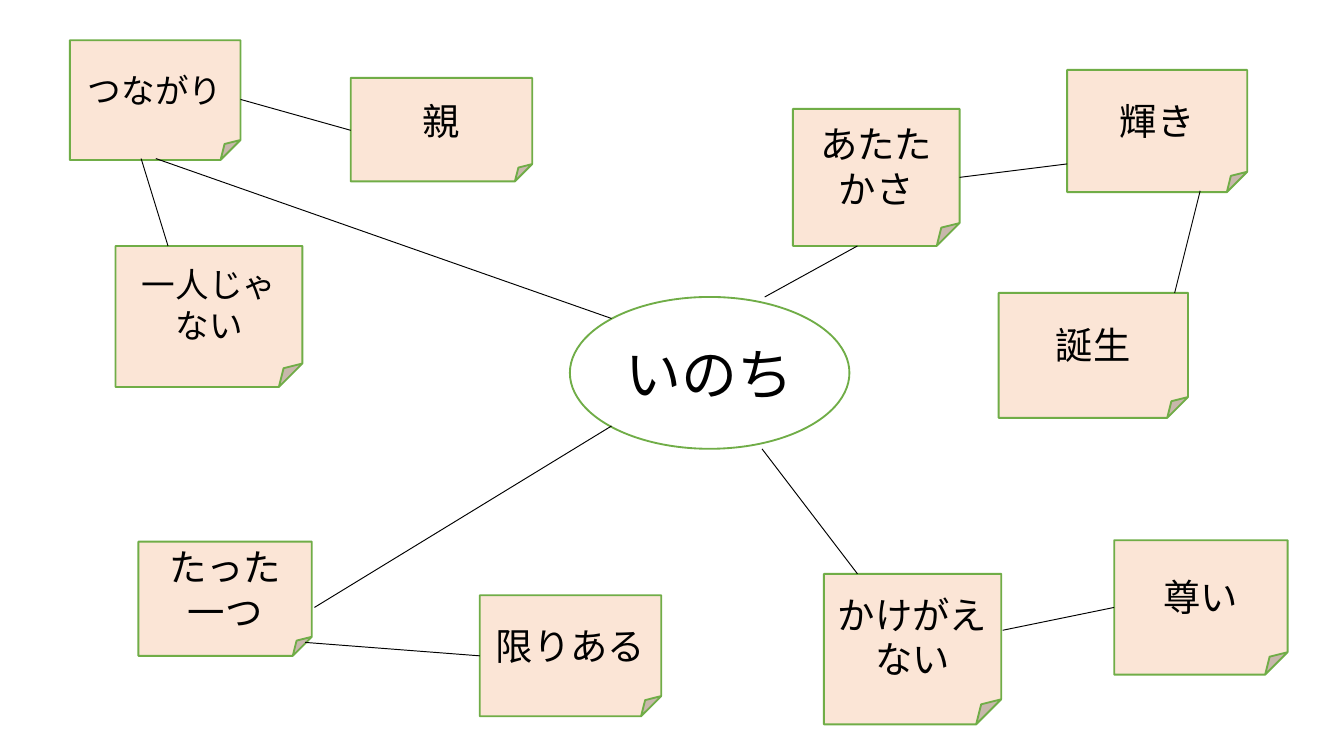
import pptx
import pptx.dml.color
import pptx.enum.shapes
import pptx.enum.text
import pptx.oxml
import pptx.oxml.ns
import pptx.util

Inches = pptx.util.Inches
SHAPES = pptx.enum.shapes.MSO_SHAPE
FONT = "Noto Sans CJK JP"
GREEN, PEACH, WHITE, BLACK = "70AD47", "FBE5D6", "FFFFFF", "000000"

# text, (left, top, width, height), text size
NOTES = [
    ("つながり", (0.52, 0.30, 1.27, 0.89), 18),
    ("誕生", (7.43, 2.18, 1.41, 0.93), 20),
    ("たった一つ", (1.03, 4.03, 1.29, 0.85), 20),
    ("輝き", (7.94, 0.52, 1.34, 0.91), 20),
    ("親", (2.61, 0.58, 1.35, 0.77), 20),
    ("一人じゃない", (0.86, 1.83, 1.39, 1.05), 18),
    ("あたたかさ", (5.90, 0.81, 1.24, 1.02), 20),
    ("限りある", (3.57, 4.43, 1.35, 0.90), 20),
    ("かけがえない", (6.13, 4.27, 1.32, 1.12), 20),
    ("尊い", (8.29, 4.02, 1.29, 1.00), 20),
]

# start and end of each link
CENTER_LINKS = [
    ((6.38, 1.83), (5.69, 2.21)),
    ((5.67, 3.34), (6.38, 4.27)),
    ((2.34, 4.52), (4.55, 3.17)),
    ((1.16, 1.18), (4.55, 2.37)),
]
NOTE_LINKS = [
    ((8.29, 4.52), (7.46, 4.69)),
    ((2.27, 4.78), (3.57, 4.88)),
    ((1.05, 1.18), (1.25, 1.83)),
    ((1.79, 0.74), (2.61, 0.97)),
    ((7.14, 1.32), (7.94, 1.22)),
    ((8.93, 1.42), (8.74, 2.18)),
]


def color(value):
    return pptx.dml.color.RGBColor.from_string(value)


def write_text(shape, text, *, size, ink=BLACK, inset=(0.1, 0.05)):
    """Fill a shape with centred text; inset is (sides, top and bottom)."""
    frame = shape.text_frame
    frame.word_wrap = True
    frame.vertical_anchor = pptx.enum.text.MSO_ANCHOR.MIDDLE
    frame.margin_left = frame.margin_right = Inches(inset[0])
    frame.margin_top = frame.margin_bottom = Inches(inset[1])
    para = frame.paragraphs[0]
    para.alignment = pptx.enum.text.PP_ALIGN.CENTER
    span = para.add_run()
    span.text = text
    span.font.name = FONT
    span.font.size = pptx.util.Pt(size)
    span.font.color.rgb = color(ink)
    east_asian = pptx.oxml.parse_xml(
        f'<a:ea {pptx.oxml.ns.nsdecls("a")} typeface="{FONT}"/>')
    span.font._element.find(pptx.oxml.ns.qn("a:latin")).addnext(east_asian)


def draw_shape(page, kind, box, fill):
    shape = page.shapes.add_shape(kind, *map(Inches, box))
    shape.shadow.inherit = False
    shape.fill.solid()
    shape.fill.fore_color.rgb = color(fill)
    shape.line.color.rgb = color(GREEN)
    shape.line.width = pptx.util.Pt(1)
    return shape


def draw_center(page, box, text):
    oval = draw_shape(page, SHAPES.OVAL, box, WHITE)
    write_text(oval, text, size=30, inset=(0.07, 0.04))


def draw_note(page, box, text, size):
    note = draw_shape(page, SHAPES.FOLDED_CORNER, box, PEACH)
    write_text(note, text, size=size)


def draw_link(page, start, end):
    link = page.shapes.add_connector(
        pptx.enum.shapes.MSO_CONNECTOR.STRAIGHT, *map(Inches, start + end))
    link.line.color.rgb = color(BLACK)
    link.line.width = pptx.util.Pt(0.5)
    link._element.spPr.append(
        pptx.oxml.parse_xml(f'<a:effectLst {pptx.oxml.ns.nsdecls("a")}/>'))


def draw_mind_map(page, left, top):
    """Draw the centre, its notes and their links from a top-left corner."""
    def place(x, y, *extent):
        return (left + x, top + y, *extent)

    draw_center(page, place(4.24, 2.21, 2.08, 1.13), "いのち")
    for text, box, size in NOTES:
        draw_note(page, place(*box), text, size)
    for start, end in CENTER_LINKS + NOTE_LINKS:
        draw_link(page, place(*start), place(*end))


def main():
    deck = pptx.Presentation()
    deck.slide_width = Inches(10)
    deck.slide_height = deck.slide_width * 9 // 16
    page = deck.slides.add_slide(deck.slide_layouts.get_by_name("Blank"))
    draw_mind_map(page, 0, 0)
    deck.save("out.pptx")


if __name__ == "__main__":
    main()
